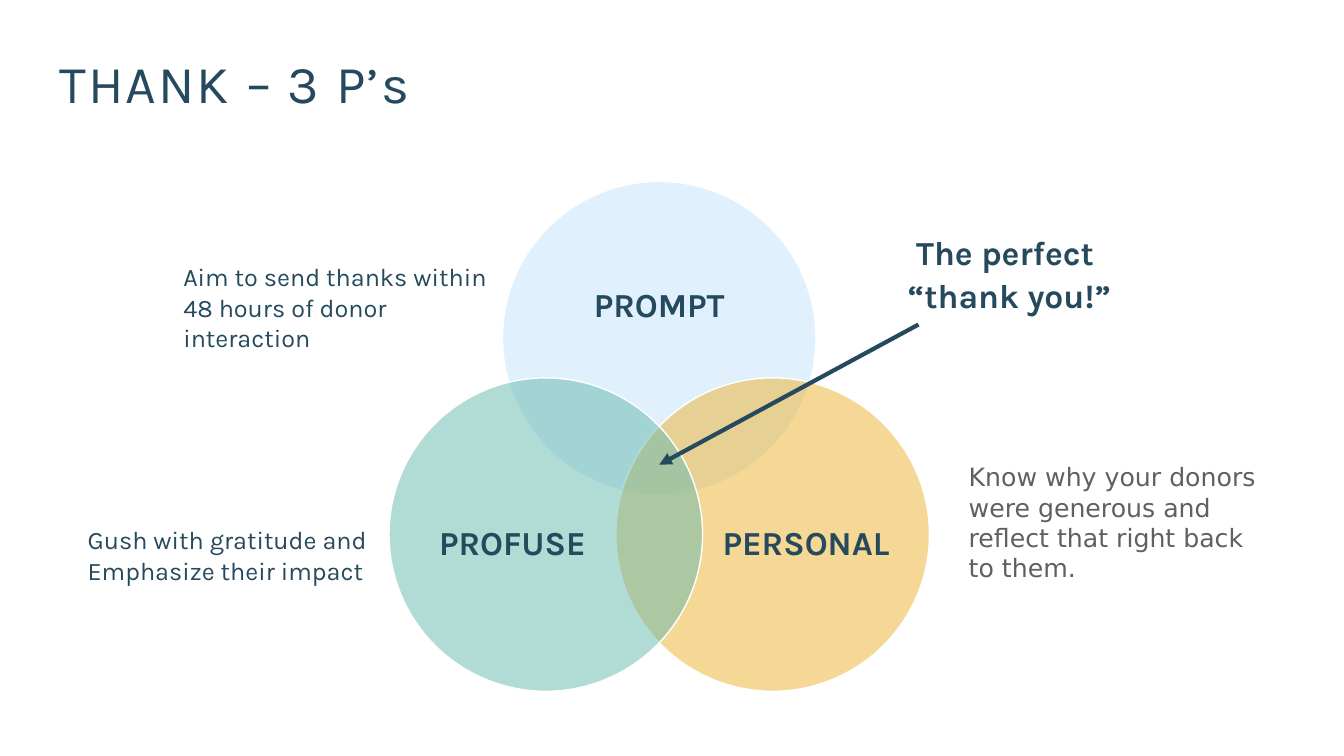
import pptx
import pptx.util
import pptx.dml.color
import pptx.enum.shapes
import pptx.enum.text
import pptx.oxml
import pptx.oxml.ns

RGB = pptx.dml.color.RGBColor
NAVY = RGB(0x25, 0x4A, 0x5D)
GREY = RGB(0x60, 0x60, 0x60)
WHITE = RGB(0xFF, 0xFF, 0xFF)
SKY = RGB(0xC2, 0xE3, 0xFA)
GOLD = RGB(0xEC, 0xB2, 0x2D)
TEAL = RGB(0x65, 0xBA, 0xAF)
ALIGN = pptx.enum.text.PP_ALIGN
ANCHOR = pptx.enum.text.MSO_ANCHOR

deck = pptx.Presentation()
deck.slide_width = pptx.util.Inches(13.33)
deck.slide_height = pptx.util.Inches(7.5)
slide = deck.slides.add_slide(deck.slide_layouts[6])

# Grid of 100 columns by 100 rows
COL = deck.slide_width / 100
ROW = deck.slide_height / 100


def place(*cells):
    """Turn column, row, column, row ... into lengths."""
    return [round(n * (COL, ROW)[i % 2]) for i, n in enumerate(cells)]


def write(shape, text, size, anchor, space=1.0, **look):
    """Fill a shape with one paragraph and return its run."""
    frame = shape.text_frame
    frame.vertical_anchor = anchor
    par = frame.paragraphs[0]
    par.text = text
    par.line_spacing = space
    par.alignment = look.pop("align", ALIGN.LEFT)
    color = look.pop("color", NAVY)
    style = {"name": "Karla", "size": pptx.util.Pt(size), **look}
    for run in par.runs:
        for key, value in style.items():
            setattr(run.font, key, value)
        run.font.color.rgb = color
    return par.runs[0]


# Three see-through circles: centre, text nudge, fill
MID, HIGH, LOW, STEP = 49.05, 44.73, 70.71, 8.44
SIZE = round(23.33 * COL)
venn = slide.shapes.add_group_shape()
circles = [
    ("PROMPT", MID, HIGH, 0, -4.2, SKY),
    ("PERSONAL", MID + STEP, LOW, 2.48, 1.33, GOLD),
    ("PROFUSE", MID - STEP, LOW, -2.48, 1.33, TEAL),
]
for name, x, y, right, down, fill in circles:
    left, top = place(x, y)
    disc = venn.shapes.add_shape(
        pptx.enum.shapes.MSO_SHAPE.OVAL,
        left - SIZE // 2, top - SIZE // 2, SIZE, SIZE)
    disc.shadow.inherit = False
    disc.fill.solid()
    disc.fill.fore_color.rgb = fill
    tint = disc.fill._xPr.find(".//" + pptx.oxml.ns.qn("a:srgbClr"))
    tint.append(pptx.oxml.parse_xml(
        f'<a:alpha {pptx.oxml.ns.nsdecls("a")} val="50000"/>'))
    disc.line.color.rgb = WHITE
    disc.line.width = pptx.util.Pt(1)
    write(disc, name, 24, ANCHOR.MIDDLE, 0.9, bold=True, align=ALIGN.CENTER)
    shift_x, shift_y = place(2 * right, 2 * down)
    inset = {
        "margin_left": max(shift_x, 0), "margin_right": max(-shift_x, 0),
        "margin_top": max(shift_y, 0), "margin_bottom": max(-shift_y, 0),
        "word_wrap": False,
    }
    for key, value in inset.items():
        setattr(disc.text_frame, key, value)

# Title, callout and notes beside the circles
texts = [
    ("The perfect \n“thank you!”", (63.1, 29.6, 24, 12.53), 24, ANCHOR.TOP,
     {"space": 1.07, "bold": True, "align": ALIGN.CENTER}),
    ("Know why your donors were generous and reflect that right back to them.",
     (71.34, 60.4, 24, 21.6), 18, ANCHOR.TOP,
     {"name": "DejaVu Sans", "color": GREY}),
    ("Gush with gratitude and Emphasize their impact",
     (5.78, 68.67, 24, 9.47), 18, ANCHOR.MIDDLE, {}),
    ("Aim to send thanks within 48 hours of donor interaction",
     (12.9, 33.87, 25.5, 13.47), 18, ANCHOR.MIDDLE, {}),
    ("THANK – 3 P’s", (3.68, 6.93, 86.27, 9.07), 38, ANCHOR.MIDDLE,
     {"space": 0.9}),
]
for text, cells, size, anchor, look in texts:
    box = slide.shapes.add_textbox(*place(*cells))
    box.text_frame.word_wrap = True
    run = write(box, text, size, anchor, **look)
# The title comes last and has wider letter spacing
run._r.get_or_add_rPr().set("spc", "150")

# Arrow from the callout to the shared centre
arrow = slide.shapes.add_connector(
    pptx.enum.shapes.MSO_CONNECTOR.STRAIGHT,
    *place(68.34, 42.93, MID, 61.47))
arrow.line.color.rgb = NAVY
arrow.line.width = pptx.util.Pt(3)
arrow.line._get_or_add_ln().append(pptx.oxml.parse_xml(
    f'<a:tailEnd {pptx.oxml.ns.nsdecls("a")} type="triangle"/>'))
arrow._element.spPr.append(pptx.oxml.parse_xml(
    f'<a:effectLst {pptx.oxml.ns.nsdecls("a")}/>'))

deck.save("out.pptx")
